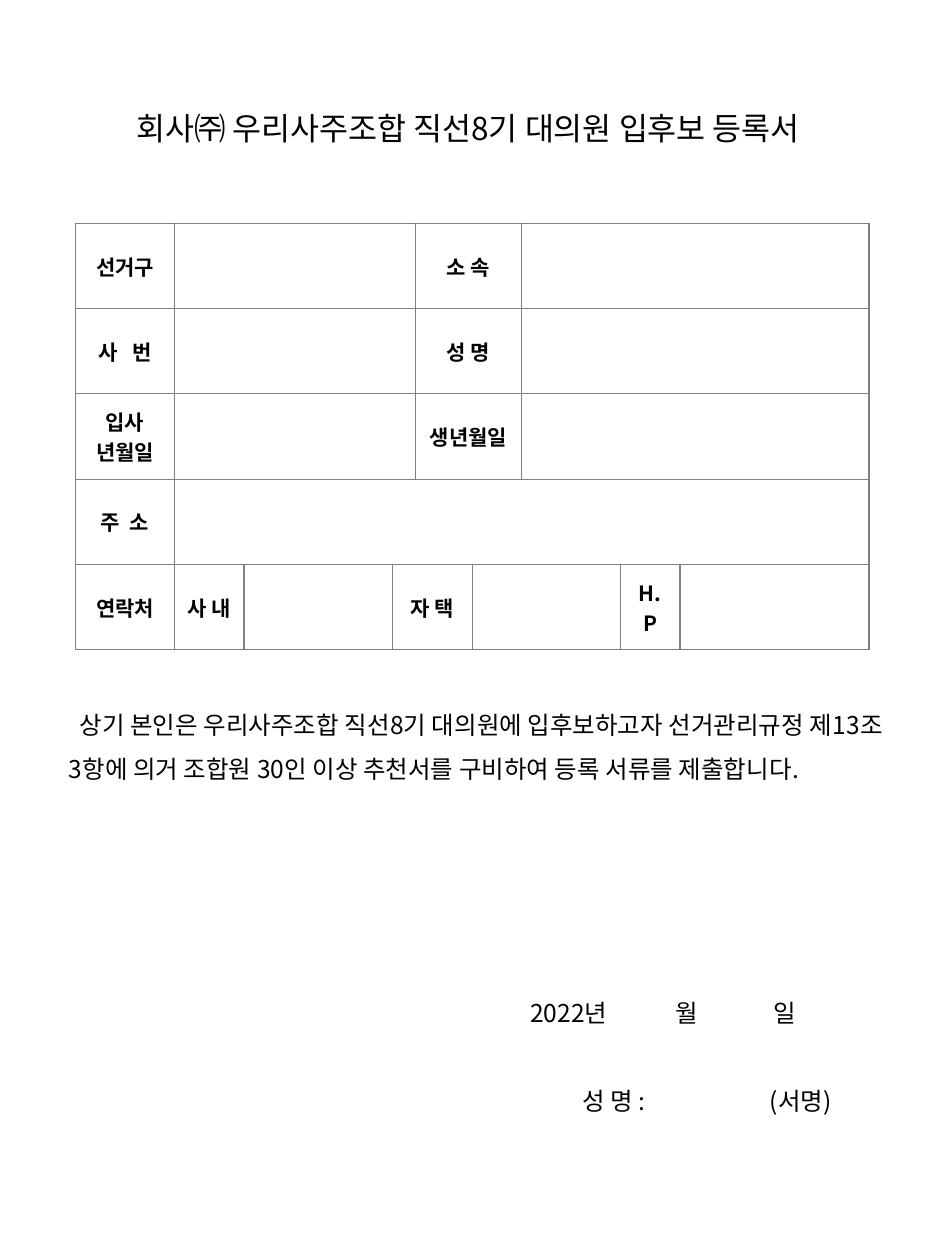
from dataclasses import dataclass

from lxml import etree
from pptx import Presentation
from pptx import util as u
from pptx.dml.color import RGBColor
from pptx.enum import text
from pptx.oxml.ns import qn

FONT = "Noto Sans CJK KR"
HUES = {"ink": "000000", "rule": "808080"}
COLS = [2.0, 1.4, 3.0, 0.46, 1.14, 0.99, 2.0, 1.2, 3.81]
ROW = 1.72


@dataclass
class Label:
    row: int
    col: int
    lines: tuple
    gap: float = 0  # extra points between the two syllables


@dataclass
class Line:
    words: str
    tabs: tuple
    before: float = 0
    indent: float = 0


LABELS = [
    Label(0, 0, ("선거구",)), Label(0, 4, ("소 속",)),
    Label(1, 0, ("사 번",), 2.7), Label(1, 4, ("성 명",)),
    Label(2, 0, ("입사", "년월일")), Label(2, 4, ("생년월일",)),
    Label(3, 0, ("주 소",), 1.35),
    Label(4, 0, ("연락처",)), Label(4, 1, ("사 내",)),
    Label(4, 3, ("자 택",)), Label(4, 7, ("H.P",)),
]

# Row, first column, last column
SPANS = [(r, a, b) for r in range(3) for a, b in ((1, 3), (4, 5), (6, 8))]
SPANS += [(3, 1, 8), (4, 3, 4), (4, 5, 6)]

LINES = [
    Line("상기 본인은 우리사주조합 직선8기 대의원에 입후보하고자 선거관리규정 제13조\t3항에 의거 "
         "조합원 30인 이상 추천서를 구비하여 등록 서류를 제출합니다.", (1.1,), indent=0.22),
    Line("\t2022년\t월\t일", (9.3, 12.23, 14.2), before=114),
    Line("\t성 명 :\t(서명)", (10.35, 14.13), before=25),
]


def add_run(par, words: str, size: float, bold: bool = False, gap: float = 0) -> None:
    run = par.add_run()
    run.text = words
    font = run.font
    font.size, font.bold, font.name = u.Pt(size), bold, FONT
    font.color.rgb = RGBColor.from_string(HUES["ink"])
    props = run._r.get_or_add_rPr()
    etree.SubElement(props, qn("a:ea")).set("typeface", FONT)
    if gap:
        props.set("spc", str(round(gap * 100)))


def set_tabs(par, stops: tuple) -> None:
    tabs = etree.SubElement(par._p.get_or_add_pPr(), qn("a:tabLst"))
    for stop in stops:
        etree.SubElement(tabs, qn("a:tab"), pos=str(u.Cm(stop)), algn="l")


def rule_cell(cell) -> None:
    props = cell._tc.get_or_add_tcPr()
    for side in ("lnL", "lnR", "lnT", "lnB"):
        line = etree.SubElement(props, qn(f"a:{side}"), w=str(u.Pt(0.75)))
        fill = etree.SubElement(line, qn("a:solidFill"))
        etree.SubElement(fill, qn("a:srgbClr"), val=HUES["rule"])
    cell.fill.background()


def add_title(slide) -> None:
    title = slide.shapes.title
    title.left, title.top = u.Cm(1.14), u.Cm(2.08)
    title.width, title.height = u.Cm(16.59), u.Cm(1.02)
    frame = title.text_frame
    frame.auto_size = text.MSO_AUTO_SIZE.NONE
    frame.vertical_anchor = text.MSO_ANCHOR.TOP
    par = frame.paragraphs[0]
    par.alignment = text.PP_ALIGN.CENTER
    add_run(par, "회사㈜ 우리사주조합 직선8기 대의원 입후보 등록서", 18)


def fill_label(cell, label: Label) -> None:
    frame = cell.text_frame
    for i, words in enumerate(label.lines):
        par = frame.add_paragraph() if i else frame.paragraphs[0]
        par.alignment = text.PP_ALIGN.CENTER
        if label.gap:
            head, tail = words.split(" ")
            add_run(par, head + " ", 12, True, label.gap)
            words = tail
        add_run(par, words, 12, True)


def add_form(slide) -> None:
    form = slide.shapes.add_table(5, len(COLS), u.Cm(1.52), u.Cm(4.5),
                                  u.Cm(sum(COLS)), u.Cm(5 * ROW)).table
    form.first_row = form.horz_banding = False
    for col, wide in zip(form.columns, COLS):
        col.width = u.Cm(wide)
    for row in form.rows:
        row.height = u.Cm(ROW)
    for cell in form.iter_cells():
        cell.vertical_anchor = text.MSO_ANCHOR.MIDDLE
        rule_cell(cell)
    for row, start, end in SPANS:
        form.cell(row, start).merge(form.cell(row, end))
    for label in LABELS:
        fill_label(form.cell(label.row, label.col), label)


def add_pledge(slide) -> None:
    box = slide.shapes.add_textbox(u.Cm(1.14), u.Cm(13.9), u.Cm(17.2), u.Cm(8.84))
    frame = box.text_frame
    frame.word_wrap = True
    for i, line in enumerate(LINES):
        par = frame.add_paragraph() if i else frame.paragraphs[0]
        par.line_spacing = 1.5
        if line.before:
            par.space_before = u.Pt(line.before)
        if line.indent:
            par._p.get_or_add_pPr().set("indent", str(u.Cm(line.indent)))
        set_tabs(par, line.tabs)
        add_run(par, line.words, 14)


def main() -> None:
    deck = Presentation()
    deck.slide_width, deck.slide_height = u.Cm(19.05), u.Cm(25.4)
    slide = deck.slides.add_slide(deck.slide_layouts[5])
    # Heading, entry form, then pledge with date and signature
    add_title(slide)
    add_form(slide)
    add_pledge(slide)
    deck.save("out.pptx")


if __name__ == "__main__":
    main()
